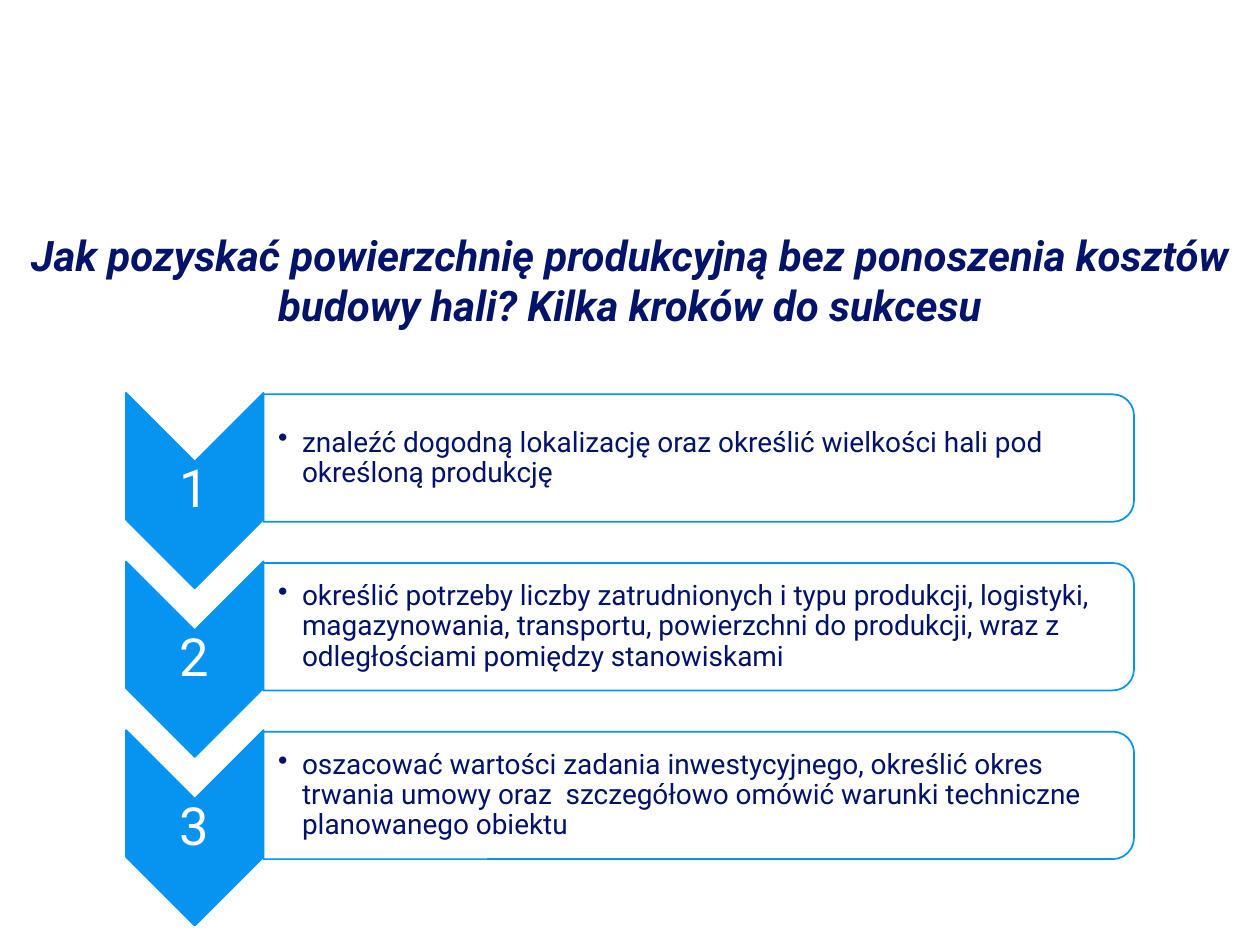
from dataclasses import dataclass

from lxml import etree
from pptx import Presentation
from pptx.dml.color import RGBColor
from pptx.enum.shapes import MSO_SHAPE
from pptx.enum.text import MSO_ANCHOR, PP_ALIGN
from pptx.oxml.ns import qn
from pptx.shapes.autoshape import Shape
from pptx.slide import Slide
from pptx.text.text import _Paragraph
from pptx.util import Cm, Pt

CHEVRON = MSO_SHAPE.CHEVRON
ROUND_TOP = MSO_SHAPE.ROUND_2_SAME_RECTANGLE
MIDDLE = MSO_ANCHOR.MIDDLE
CENTER = PP_ALIGN.CENTER

NAVY = RGBColor(0x03, 0x13, 0x6A)
BLUE = RGBColor(0x07, 0x94, 0xF0)
WHITE = RGBColor(0xFF, 0xFF, 0xFF)
FONT = "Roboto"
STEP_PITCH = 3.4  # cm between the tops of two steps


@dataclass(frozen=True)
class Box:
    """Area on the slide, in centimetres."""
    left: float
    top: float
    width: float
    height: float

    def down(self, distance: float) -> "Box":
        return Box(self.left, self.top + distance, self.width, self.height)


@dataclass(frozen=True)
class Step:
    number: str
    advice: str


TITLE_BOX = Box(0, 5.13, 25.4, 2.01)
CHEVRON_BOX = Box(2.54, 7.92, 2.77, 3.94)
NUMBER_BOX = Box(2.54, 9.3, 2.77, 1.19)
PANEL_BOX = Box(5.31, 7.95, 17.55, 2.57)
ADVICE_BOX = Box(5.31, 8.08, 17.42, 2.31)

TITLE = ("Jak pozyskać powierzchnię produkcyjną bez ponoszenia kosztów "
         "budowy hali? Kilka kroków do sukcesu")
STEPS = [
    Step("1", "znaleźć dogodną lokalizację oraz określić wielkości hali pod "
              "określoną produkcję"),
    Step("2", "określić potrzeby liczby zatrudnionych i typu produkcji, "
              "logistyki, magazynowania, transportu, powierzchni do produkcji, "
              "wraz z odległościami pomiędzy stanowiskami"),
    Step("3", "oszacować wartości zadania inwestycyjnego, określić okres "
              "trwania umowy oraz  szczegółowo omówić warunki techniczne "
              "planowanego obiektu"),
]


def add_turned_shape(slide: Slide, kind: MSO_SHAPE, box: Box, fill: RGBColor) -> Shape:
    """Add a shape turned by 90 degrees that covers the given box."""
    shift = (box.width - box.height) / 2
    shape = slide.shapes.add_shape(kind, Cm(box.left + shift), Cm(box.top - shift),
                                   Cm(box.height), Cm(box.width))
    shape.rotation = 90
    shape.shadow.inherit = False
    shape.fill.solid()
    shape.fill.fore_color.rgb = fill
    shape.line.color.rgb = BLUE
    shape.line.width = Pt(1)
    return shape


def add_text(slide: Slide, box: Box, text: str, size: float, color: RGBColor,
             margins: tuple[float, float, float, float],
             emphasis: bool = False) -> _Paragraph:
    """Add one paragraph; margins are left, top, right and bottom in cm."""
    frame = slide.shapes.add_textbox(Cm(box.left), Cm(box.top),
                                     Cm(box.width), Cm(box.height)).text_frame
    frame.word_wrap = True
    frame.vertical_anchor = MIDDLE
    (frame.margin_left, frame.margin_top,
     frame.margin_right, frame.margin_bottom) = map(Cm, margins)
    paragraph = frame.paragraphs[0]
    run = paragraph.add_run()
    run.text = text
    run.font.name = FONT
    run.font.size = Pt(size)
    run.font.color.rgb = color
    run.font.bold = run.font.italic = emphasis
    return paragraph


def add_bullet(paragraph: _Paragraph, indent: float) -> None:
    properties = paragraph._p.get_or_add_pPr()
    properties.set("marL", str(Cm(indent)))
    properties.set("indent", str(-Cm(indent)))
    etree.SubElement(properties, qn("a:buChar")).set("char", "•")


def add_step(slide: Slide, step: Step, offset: float) -> None:
    # Numbered chevron
    add_turned_shape(slide, CHEVRON, CHEVRON_BOX.down(offset), BLUE)
    number = add_text(slide, NUMBER_BOX.down(offset), step.number, 30, WHITE,
                      (0.05, 0.05, 0.05, 0.05))
    number.alignment = CENTER
    number.line_spacing = 0.9

    # Slightly transparent panel with the advice
    panel = add_turned_shape(slide, ROUND_TOP, PANEL_BOX.down(offset), WHITE)
    fill_color = panel._element.spPr.find(qn("a:solidFill"))[0]
    etree.SubElement(fill_color, qn("a:alpha")).set("val", "90000")
    advice = add_text(slide, ADVICE_BOX.down(offset), step.advice, 16, NAVY,
                      (0.3, 0.03, 0.03, 0.03))
    advice.line_spacing = 0.9
    add_bullet(advice, 0.48)


def main() -> None:
    presentation = Presentation()
    presentation.slide_width = Cm(25.4)
    presentation.slide_height = Cm(19.05)
    slide = presentation.slides.add_slide(presentation.slide_layouts[6])

    # Title, raised by a deep bottom margin
    title = add_text(slide, TITLE_BOX, TITLE, 24, NAVY,
                     (0.25, 0.13, 0.25, 1.12), emphasis=True)
    title.alignment = CENTER

    # Steps
    for index, step in enumerate(STEPS):
        add_step(slide, step, index * STEP_PITCH)

    presentation.save("out.pptx")


if __name__ == "__main__":
    main()
